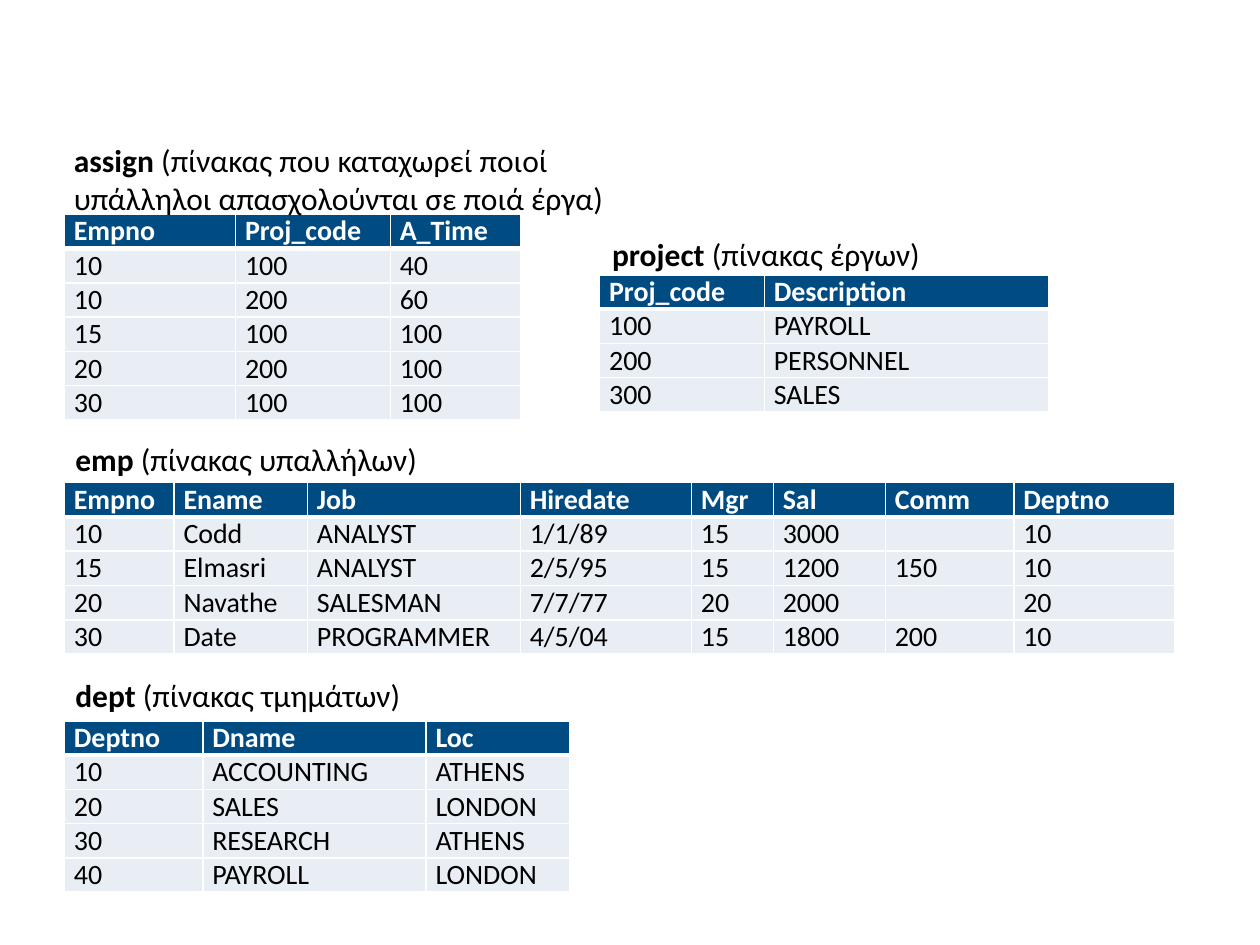
from dataclasses import dataclass

from lxml import etree
from pptx import Presentation
from pptx import util as u
from pptx.dml import color
from pptx.enum import text
from pptx.oxml import ns


@dataclass(frozen=True)
class Theme:
    font: str = "Calibri"
    caption_size: int = 18
    cell_size: int = 16
    ink: str = "000000"
    paper: str = "FFFFFF"
    header: str = "004B82"
    body: str = "E9EDF4"
    border: int = 1
    header_border: int = 3


THEME = Theme()
ROW_HEIGHT = 0.68

TABLES = [
    {
        "at": (1.3, 9.73),
        "widths": (2.21, 2.69, 4.29, 3.45, 1.65, 2.26, 2.59, 3.25),
        "rows": [
            ("Empno", "Ename", "Job", "Hiredate", "Mgr", "Sal", "Comm", "Deptno"),
            ("10", "Codd", "ANALYST", "1/1/89", "15", "3000", "", "10"),
            ("15", "Elmasri", "ANALYST", "2/5/95", "15", "1200", "150", "10"),
            ("20", "Navathe", "SALESMAN", "7/7/77", "20", "2000", "", "20"),
            ("30", "Date", "PROGRAMMER", "4/5/04", "15", "1800", "200", "10"),
        ],
    },
    {
        "at": (1.3, 4.32),
        "widths": (3.45, 3.12, 2.62),
        "rows": [
            ("Empno", "Proj_code", "A_Time"),
            ("10", "100", "40"),
            ("10", "200", "60"),
            ("15", "100", "100"),
            ("20", "200", "100"),
            ("30", "100", "100"),
        ],
    },
    {
        "at": (12.09, 5.54),
        "widths": (3.32, 5.73),
        "rows": [
            ("Proj_code", "Description"),
            ("100", "PAYROLL"),
            ("200", "PERSONNEL"),
            ("300", "SALES"),
        ],
    },
    {
        "at": (1.3, 14.53),
        "widths": (2.79, 4.5, 2.9),
        "rows": [
            ("Deptno", "Dname", "Loc"),
            ("10", "ACCOUNTING", "ATHENS"),
            ("20", "SALES", "LONDON"),
            ("30", "RESEARCH", "ATHENS"),
            ("40", "PAYROLL", "LONDON"),
        ],
    },
]

CAPTIONS = [
    ("assign", " (πίνακας που καταχωρεί ποιοί υπάλληλοι απασχολούνται σε ποιά έργα)",
     (1.24, 2.72, 12.7, 1.8), True),
    ("project", " (πίνακας έργων)", (12.09, 4.62, 6.76, 1.02), False),
    ("dept", " (πίνακας τμημάτων)", (1.27, 13.51, 7.11, 1.02), False),
    ("emp", " (πίνακας υπαλλήλων)", (1.27, 8.74, 7.47, 1.02), False),
]


def add_run(p, content, size, ink, bold):
    r = p.add_run()
    r.text = content
    for name, value in {"name": THEME.font, "size": u.Pt(size), "bold": bold}.items():
        setattr(r.font, name, value)
    r.font.color.rgb = color.RGBColor.from_string(ink)


def add_border(cell, side, width):
    props = cell._tc.get_or_add_tcPr()
    line = etree.SubElement(props, ns.qn(f"a:ln{side}"), w=str(u.Pt(width)))
    fill = etree.SubElement(line, ns.qn("a:solidFill"))
    etree.SubElement(fill, ns.qn("a:srgbClr"), val=THEME.paper)


def fill_cell(cell, content, row):
    header = row == 0
    margins = {"margin_left": 0.19, "margin_right": 0.19, "margin_top": 0, "margin_bottom": 0}
    for name, value in margins.items():
        setattr(cell, name, u.Cm(value))
    thick = {0: "B", 1: "T"}.get(row)
    for side in "LRTB":
        add_border(cell, side, THEME.header_border if side == thick else THEME.border)
    cell.fill.solid()
    cell.fill.fore_color.rgb = color.RGBColor.from_string(THEME.header if header else THEME.body)
    p = cell.text_frame.paragraphs[0]
    if content:
        add_run(p, content, THEME.cell_size, THEME.paper if header else THEME.ink, header)
    else:
        etree.SubElement(p._p, ns.qn("a:endParaRPr"), sz=str(THEME.cell_size * 100))


def add_data_table(s, at, widths, rows):
    size = (sum(widths), ROW_HEIGHT * len(rows))
    frame = s.shapes.add_table(len(rows), len(widths), *map(u.Cm, at + size))
    table = frame.table
    for column, width in zip(table.columns, widths):
        column.width = u.Cm(width)
    for i, values in enumerate(rows):
        table.rows[i].height = u.Cm(ROW_HEIGHT)
        for j, value in enumerate(values):
            fill_cell(table.cell(i, j), value, i)


def add_caption(s, name, description, box, wrap):
    tf = s.shapes.add_textbox(*map(u.Cm, box)).text_frame
    for key, value in {"word_wrap": wrap, "auto_size": text.MSO_AUTO_SIZE.SHAPE_TO_FIT_TEXT}.items():
        setattr(tf, key, value)
    p = tf.paragraphs[0]
    add_run(p, name, THEME.caption_size, THEME.ink, True)
    add_run(p, description, THEME.caption_size, THEME.ink, False)


def main():
    prs = Presentation()
    prs.slide_width, prs.slide_height = u.Cm(25.4), u.Cm(19.05)
    s = prs.slides.add_slide(prs.slide_layouts[6])
    for table in TABLES:
        add_data_table(s, **table)
    for caption in CAPTIONS:
        add_caption(s, *caption)
    prs.save("out.pptx")


if __name__ == "__main__":
    main()
